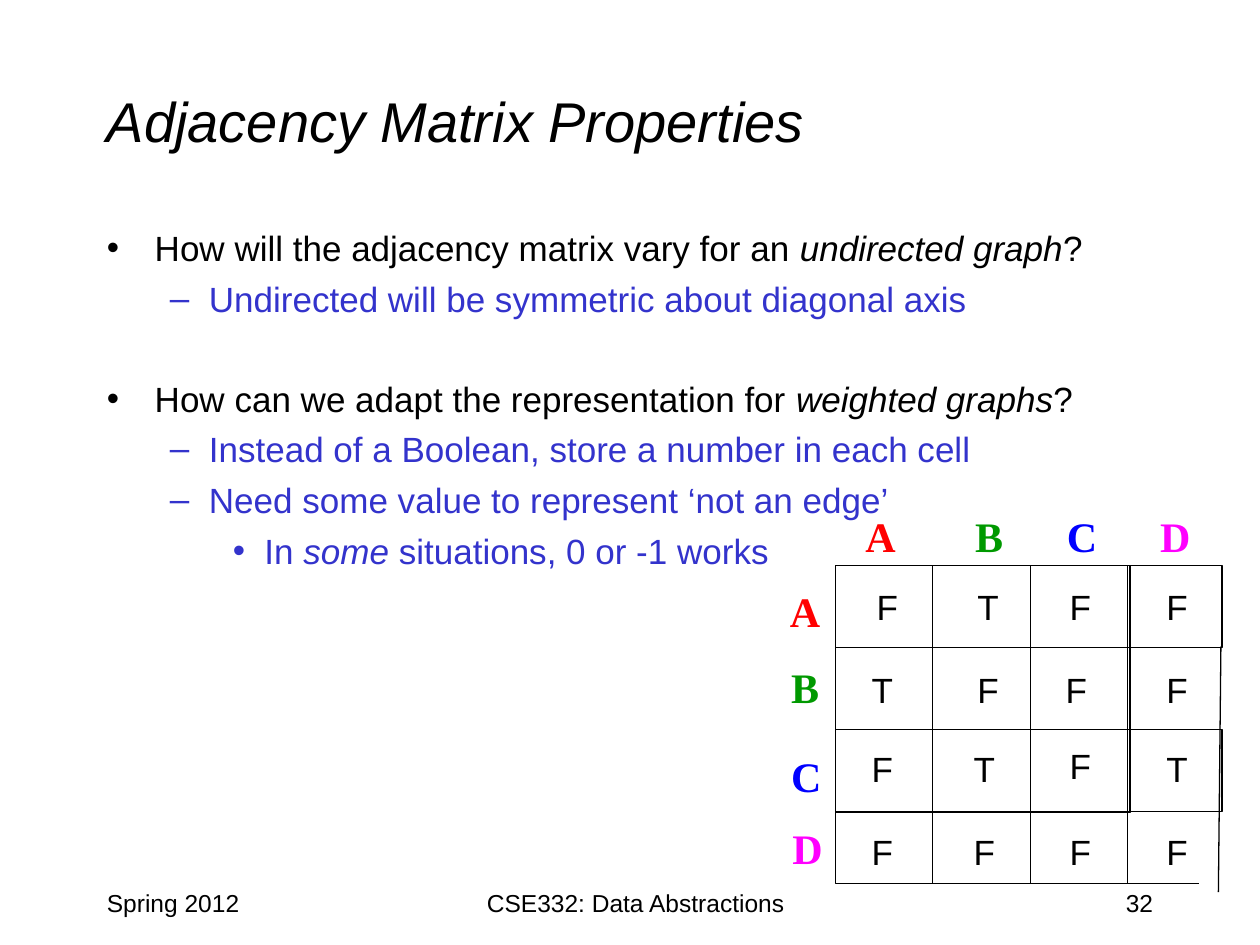
from lxml import etree
from pptx import Presentation
from pptx.dml.color import RGBColor
from pptx.enum.shapes import MSO_CONNECTOR, MSO_SHAPE
from pptx.enum.text import MSO_ANCHOR, PP_ALIGN
from pptx.oxml.ns import qn
from pptx.util import Inches, Pt

RECTANGLE = MSO_SHAPE.RECTANGLE
STRAIGHT = MSO_CONNECTOR.STRAIGHT
TOP, MIDDLE = MSO_ANCHOR.TOP, MSO_ANCHOR.MIDDLE
LEFT, CENTER, RIGHT = PP_ALIGN.LEFT, PP_ALIGN.CENTER, PP_ALIGN.RIGHT

BLACK, WHITE, BLUE = "000000", "FFFFFF", "3333CC"
LEVELS = [("•", 0.38, 0.38, BLACK), ("–", 0.81, 0.31, BLUE), ("•", 1.25, 0.25, BLUE)]
OUTLINE = [
    (0, 5, ["How will the adjacency matrix vary for an ", "undirected graph", "?"]),
    (1, 5, ["Undirected will be symmetric about diagonal axis"]),
    (0, 33, ["How can we adapt the representation for ", "weighted graphs", "?"]),
    (1, 5, ["Instead of a Boolean, store a number in each cell"]),
    (1, 5, ["Need some value to represent ‘not an edge’"]),
    (2, 5, ["In ", "some", " situations, 0 or -1 works"]),
]
NODES = [("A", "FF0000", 0.39), ("B", "009900", 0.37),
         ("C", "0000FF", 0.37), ("D", "FF00FF", 0.39)]
HEADER_LEFTS = [0.6, 1.47, 2.2, 2.94]
HEADER_PLACES = [(0, 0.6), (0.01, 1.2), (0.01, 1.91), (0.02, 2.48)]
MATRIX = ["FTFF", "TFFF", "FTFT", "FFFF"]
COLUMN_LEFTS = [0.65, 1.46, 2.22, 2.99]
ROW_TOPS = [0.6, 1.26, 1.88, 2.54]
NUDGES = {(0, 0): (0.04, 0), (0, 1): (0.03, 0), (1, 1): (0.03, 0),
          (1, 2): (-0.03, 0), (2, 2): (0, -0.02)}


def color(value):
    return RGBColor.from_string(value)


def add_box(shapes, left, top, width, height, anchor=TOP):
    box = shapes.add_textbox(Inches(left), Inches(top), Inches(width), Inches(height))
    box.text_frame.word_wrap = True
    box.text_frame.vertical_anchor = anchor
    return box.text_frame


def add_span(para, text, size, ink=BLACK, font="Arial", bold=False, italic=False):
    span = para.add_run()
    span.text = text
    span.font.name = font
    span.font.size = Pt(size)
    span.font.bold = bold
    span.font.italic = italic
    span.font.color.rgb = color(ink)


def set_bullet(para, mark, indent, hang):
    properties = para._p.get_or_add_pPr()
    properties.set("marL", str(Inches(indent)))
    properties.set("indent", str(-Inches(hang)))
    etree.SubElement(properties, qn("a:buFont")).set("typeface", "Arial")
    etree.SubElement(properties, qn("a:buChar")).set("char", mark)


def add_title(page, left, top, width, height):
    frame = add_box(page.shapes, left, top, width, height, MIDDLE)
    add_span(frame.paragraphs[0], "Adjacency Matrix Properties", 32, italic=True)


def add_outline(page, left, top, width, height):
    frame = add_box(page.shapes, left, top, width, height)
    for index, (level, space, parts) in enumerate(OUTLINE):
        para = frame.add_paragraph() if index else frame.paragraphs[0]
        mark, indent, hang, ink = LEVELS[level]
        para.level = level
        para.space_before = Pt(space)
        set_bullet(para, mark, indent, hang)
        for position, text in enumerate(parts):
            add_span(para, text, 20, ink, italic=position == 1)


def add_frame(shapes, left, top, width, height, fill=None):
    frame = shapes.add_shape(RECTANGLE, Inches(left), Inches(top), Inches(width), Inches(height))
    frame.shadow.inherit = False
    if fill:
        frame.fill.solid()
        frame.fill.fore_color.rgb = color(fill)
    else:
        frame.fill.background()
    frame.line.color.rgb = color(BLACK)
    frame.line.width = Pt(0.75)


def add_rule(shapes, left, top, right, bottom):
    rule = shapes.add_connector(STRAIGHT, Inches(left), Inches(top), Inches(right), Inches(bottom))
    rule.line.color.rgb = color(BLACK)
    rule.line.width = Pt(0.75)
    etree.SubElement(rule._element.spPr, qn("a:effectLst"))


def add_matrix(page, left, top):
    shapes = page.shapes.add_group_shape().shapes
    grid_left, grid_top = left + 0.46, top + 0.49
    add_frame(shapes, grid_left, grid_top, 2.34, 1.96, WHITE)
    for offset in (1.3, 0):
        add_frame(shapes, grid_left, grid_top + offset, 3.07, 0.65)
    for offset in (0, 1.55):
        add_frame(shapes, grid_left + offset, grid_top, 0.77, 2.52)
    add_rule(shapes, left + 3.52, top + 1.13, left + 3.5, top + 3.08)
    add_rule(shapes, left + 1.19, top + 3.01, left + 3.35, top + 3.01)

    for (name, ink, width), across, place in zip(NODES, HEADER_LEFTS, HEADER_PLACES):
        for x, y in ((across, 0), place):
            frame = add_box(shapes, left + x, top + y, width, 0.45)
            add_span(frame.paragraphs[0], name, 24, ink, "Times New Roman", bold=True)

    for row, values in enumerate(MATRIX):
        for column, value in enumerate(values):
            shift, drop = NUDGES.get((row, column), (0, 0))
            frame = add_box(shapes, left + COLUMN_LEFTS[column] + shift,
                            top + ROW_TOPS[row] + drop, 0.33, 0.39)
            add_span(frame.paragraphs[0], value, 20)


def add_footer(page, top, height):
    for text, left, width, align in (
        ("Spring 2012", 0.75, 2.08, LEFT),
        ("CSE332: Data Abstractions", 3.17, 3.75, CENTER),
        ("32", 7.17, 2.08, RIGHT),
    ):
        para = add_box(page.shapes, left, top, width, height).paragraphs[0]
        para.alignment = align
        add_span(para, text, 14)


def main():
    deck = Presentation()
    deck.slide_width, deck.slide_height = Inches(10), Inches(7.5)
    page = deck.slides.add_slide(deck.slide_layouts[6])
    add_title(page, 0.75, 0.33, 8.5, 1.25)
    add_outline(page, 0.75, 1.75, 8.5, 4.92)
    add_matrix(page, 6.17, 4)
    add_footer(page, 7, 0.5)
    deck.save("out.pptx")


if __name__ == "__main__":
    main()
